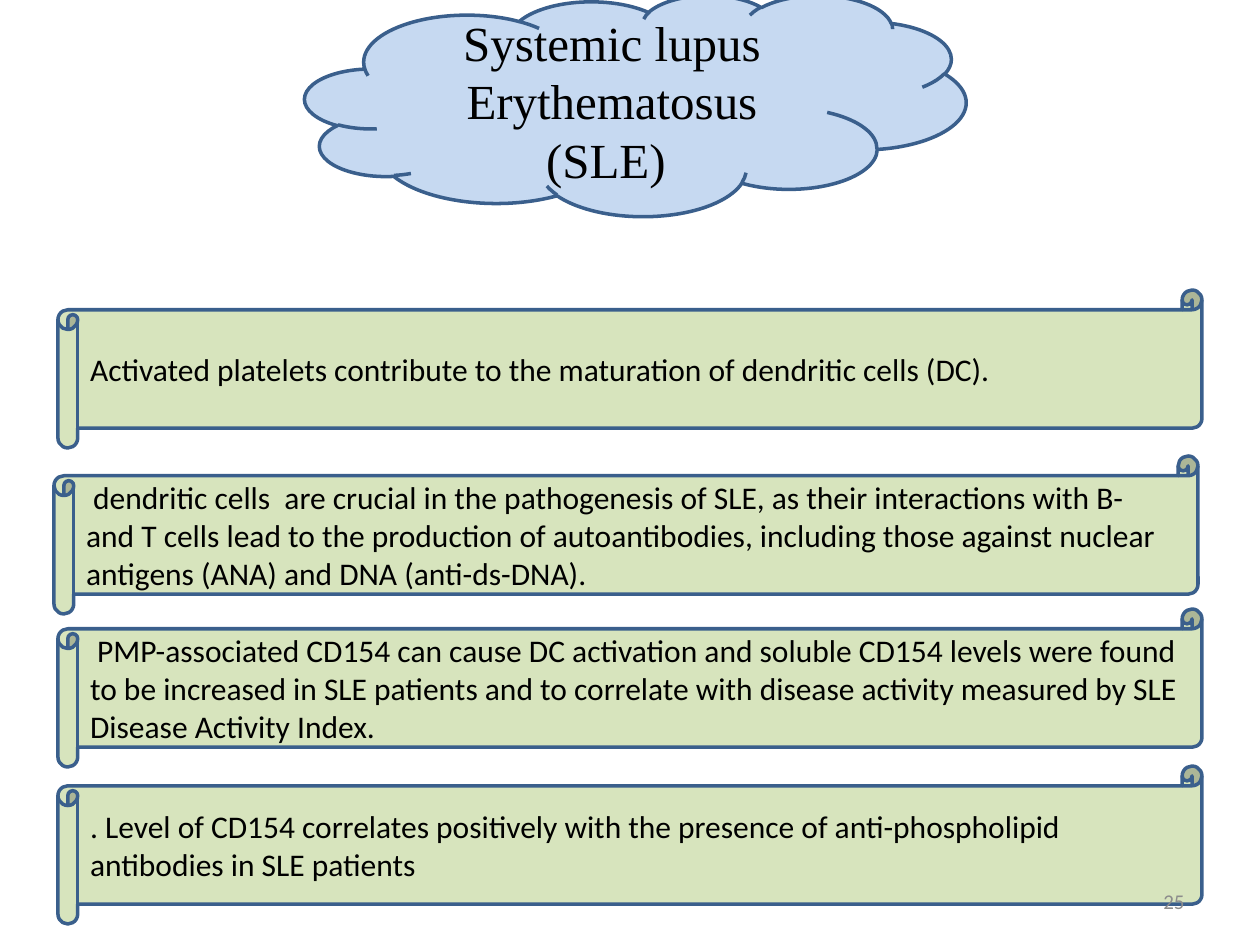
import pptx
import pptx.util
import pptx.dml.color
import pptx.enum.shapes
import pptx.enum.text

SHAPE = pptx.enum.shapes.MSO_SHAPE
ALIGN = pptx.enum.text.PP_ALIGN
EMU_PER_PX = 914400 / 126

COLORS = {"scroll": "D7E4BD", "cloud": "C6D9F1", "line": "3A5F8C",
          "text": "000000", "number": "8C8C8C"}

TITLE = "Systemic lupus Erythematosus (SLE) "
SCROLLS = [
    (58, 290, "Activated platelets contribute to the maturation of dendritic cells (DC)."),
    (54, 456, " dendritic cells  are crucial in the pathogenesis of SLE, as their interactions "
              "with B- and T cells lead to the production of autoantibodies, including those "
              "against nuclear antigens (ANA) and DNA (anti-ds-DNA)."),
    (58, 609, " PMP-associated CD154 can cause DC activation and soluble CD154 levels were found "
              "to be increased in SLE patients and to correlate with disease activity measured "
              "by SLE Disease Activity Index."),
    (58, 766, ". Level of CD154 correlates positively with the presence of anti-phospholipid "
              "antibodies in SLE patients"),
]
PAGE = "25"

FORMATS = {
    "title": {"size": pptx.util.Pt(28), "name": "Times New Roman"},
    "scroll": {"size": pptx.util.Pt(18), "name": "Calibri"},
    "number": {"size": pptx.util.Pt(12), "name": "Calibri"},
}


def px(n):
    return round(n * EMU_PER_PX)


def rgb(key):
    return pptx.dml.color.RGBColor.from_string(COLORS[key])


def write(sp, text, style, align, color="text"):
    tf = sp.text_frame
    tf.word_wrap = True
    tf.vertical_anchor = pptx.enum.text.MSO_ANCHOR.MIDDLE
    p = tf.paragraphs[0]
    p.alignment = align
    r = p.add_run()
    r.text = text
    for name, value in FORMATS[style].items():
        setattr(r.font, name, value)
    r.font.color.rgb = rgb(color)


def add_outlined(s, kind, box, fill):
    sp = s.shapes.add_shape(kind, *map(px, box))
    sp.shadow.inherit = False
    sp.fill.solid()
    sp.fill.fore_color.rgb = rgb(fill)
    sp.line.color.rgb = rgb("line")
    sp.line.width = pptx.util.Pt(2)
    return sp


def main():
    prs = pptx.Presentation()
    prs.slide_width, prs.slide_height = px(1260), px(945)
    s = prs.slides.add_slide(prs.slide_layouts[6])

    cloud = add_outlined(s, SHAPE.CLOUD, (305, -5, 661, 221), "cloud")
    write(cloud, TITLE, "title", ALIGN.CENTER)

    for left, top, text in SCROLLS:
        scroll = add_outlined(s, SHAPE.HORIZONTAL_SCROLL, (left, top, 1144, 158), "scroll")
        write(scroll, text, "scroll", ALIGN.LEFT)

    number = s.shapes.add_textbox(*map(px, (903, 876, 294, 50)))
    write(number, PAGE, "number", ALIGN.RIGHT, "number")

    prs.save("out.pptx")


if __name__ == "__main__":
    main()
